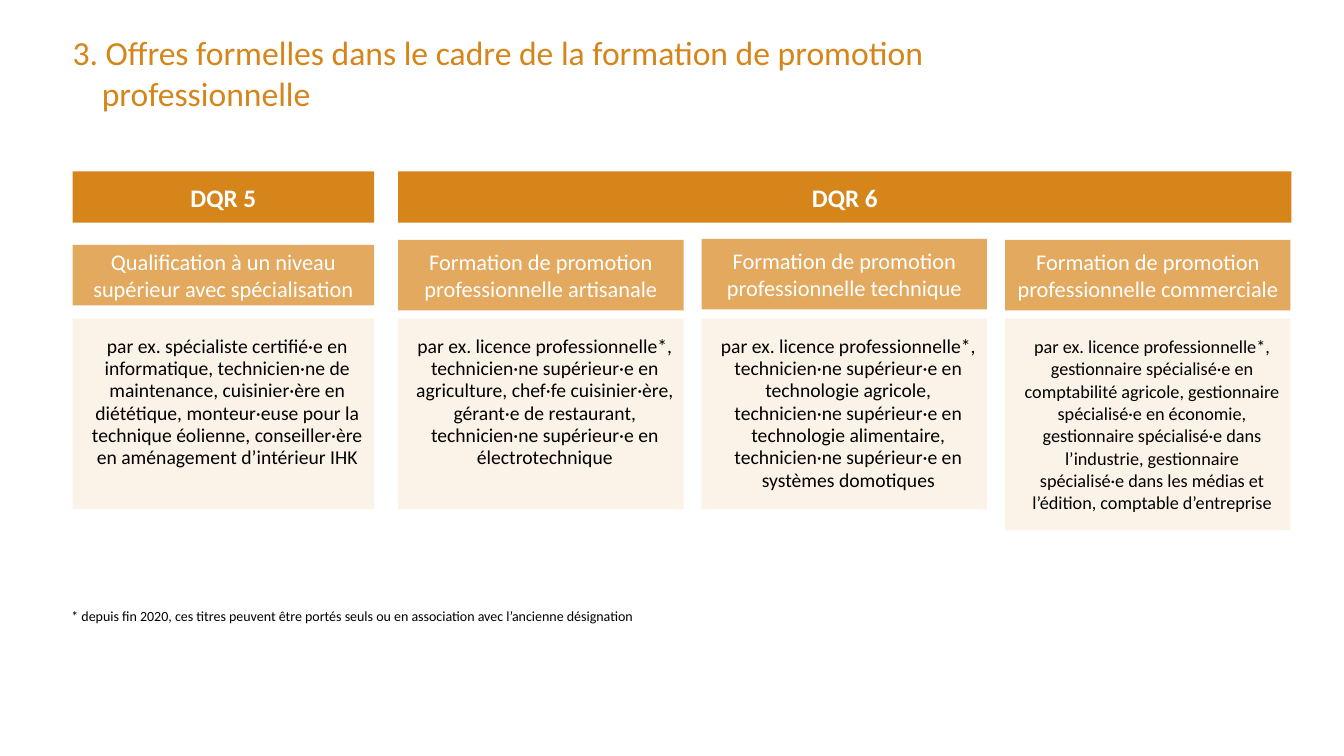
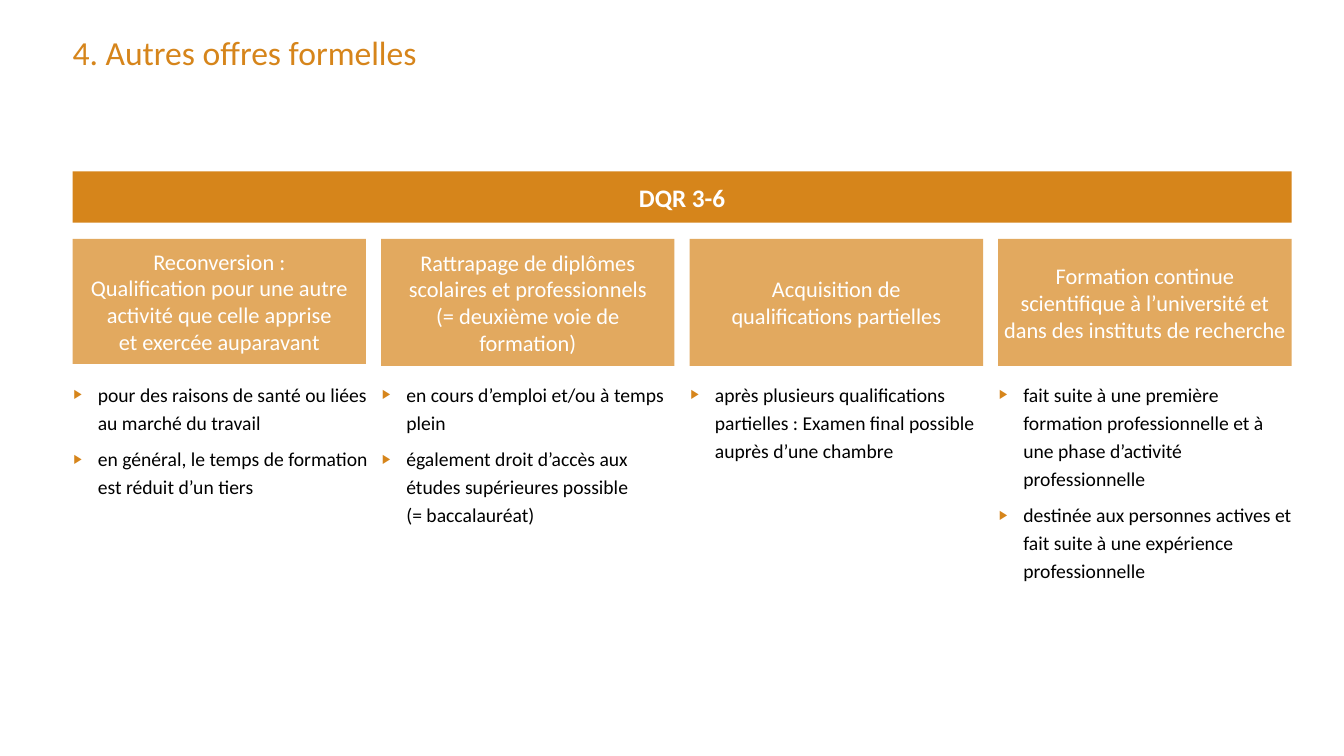
"""Build two slides on formal continuing education offers."""
from copy import deepcopy
from dataclasses import dataclass

from lxml import etree
from pptx import Presentation
from pptx import util as u
from pptx.dml import color
from pptx.enum import shapes, text
from pptx.oxml import ns

ORANGE, LIGHT_ORANGE, CREAM = "D6851B", "E2A95F", "FBF3E8"
WHITE, BLACK = "FFFFFF", "000000"
FONT = "Calibri"
LEFT, RIGHT = 0.72, 12.81
BAND_TOP, BAND_HEIGHT = 1.7, 0.51
LABEL_INSETS = (0.04, 0.08, 0.04, 0.08)
BAND_INSETS = (0.04, 0.08, 0.04, 0)
EXAMPLE_INSETS = (0.16, 0.16, 0.08, 0.16)
NO_INSETS = (0, 0, 0, 0)
TITLE_ONLY, FOUR_BODIES = 5, 4
OFFER_STEP, OFFER_WIDTH = 3.06, 2.91


@dataclass(frozen=True)
class Box:
    left: float
    top: float
    width: float
    height: float


@dataclass(frozen=True)
class Level:
    label: str
    examples: str
    label_box: Box
    examples_box: Box
    size: float = 14


@dataclass(frozen=True)
class Offer:
    label: str
    points: tuple[str, ...]
    height: float = 1.26


LEVELS = (
    Level("Qualification à un niveau supérieur avec spécialisation",
          "par ex. spécialiste certifié·e en informatique, technicien·ne de maintenance, "
          "cuisinier·ère en diététique, monteur·euse pour la technique éolienne, "
          "conseiller·ère en aménagement d’intérieur IHK",
          Box(LEFT, 2.43, 2.99, 0.6), Box(LEFT, 3.16, 2.99, 1.89)),
    Level("Formation de promotion\nprofessionnelle artisanale",
          "par ex. licence professionnelle*, technicien·ne supérieur·e en agriculture, "
          "chef·fe cuisinier·ère, gérant·e de restaurant, "
          "technicien·ne supérieur·e en électrotechnique",
          Box(3.95, 2.38, 2.83, 0.7), Box(3.95, 3.16, 2.83, 1.89)),
    Level("Formation de promotion\nprofessionnelle technique",
          "par ex. licence professionnelle*, technicien·ne supérieur·e en technologie agricole, "
          "technicien·ne supérieur·e en technologie alimentaire, "
          "technicien·ne supérieur·e en systèmes domotiques",
          Box(6.96, 2.37, 2.83, 0.7), Box(6.96, 3.16, 2.83, 1.89)),
    Level("Formation de promotion\nprofessionnelle commerciale",
          "par ex. licence professionnelle*, gestionnaire spécialisé·e en comptabilité agricole, "
          "gestionnaire spécialisé·e en économie, gestionnaire spécialisé·e dans l’industrie, "
          "gestionnaire spécialisé·e dans les médias et l’édition, comptable d’entreprise",
          Box(9.97, 2.38, 2.83, 0.7), Box(9.97, 3.16, 2.83, 2.1), 13),
)

OFFERS = (
    Offer("Reconversion :\nQualification pour une autre activité que celle apprise\n"
          "et exercée auparavant",
          ("pour des raisons de santé ou liées au marché du travail",
           "en général, le temps de formation est réduit d’un tiers"), 1.24),
    Offer("Rattrapage de diplômes scolaires et professionnels\n(= deuxième voie de formation)",
          ("en cours d’emploi et/ou à temps plein",
           "également droit d’accès aux études supérieures possible\n(= baccalauréat)")),
    Offer("Acquisition de\nqualifications partielles",
          ("après plusieurs qualifications partielles : Examen final possible\n"
           "auprès d’une chambre",)),
    Offer("Formation continue scientifique à l’université et dans des instituts de recherche",
          ("fait suite à une première formation professionnelle et à une phase d’activité "
           "professionnelle",
           "destinée aux personnes actives et\nfait suite à une expérience professionnelle")),
)


def rgb(value: str) -> color.RGBColor:
    return color.RGBColor.from_string(value)


def place(shape, box: Box) -> None:
    shape.left, shape.top = u.Inches(box.left), u.Inches(box.top)
    shape.width, shape.height = u.Inches(box.width), u.Inches(box.height)


def indent(paragraph, hanging: float, margin: float) -> None:
    properties = paragraph._p.get_or_add_pPr()
    properties.set("marL", str(u.Inches(margin)))
    properties.set("indent", str(-u.Inches(hanging)))


def add_bullet(paragraph) -> None:
    properties = paragraph._p.get_or_add_pPr()
    bullet_color = etree.SubElement(properties, ns.qn("a:buClr"))
    etree.SubElement(bullet_color, ns.qn("a:srgbClr"), val=ORANGE)
    etree.SubElement(properties, ns.qn("a:buSzPct"), val="65000")
    etree.SubElement(properties, ns.qn("a:buFont"), typeface="Arial")
    etree.SubElement(properties, ns.qn("a:buChar"), char="▶")


def write(shape, *lines: str, size: float, ink: str = BLACK, bold: bool = False,
          align=text.PP_ALIGN.LEFT, anchor=text.MSO_ANCHOR.TOP, insets=NO_INSETS,
          spacing: float | None = None, hanging: float = 0, margin: float = 0,
          bullets: bool = False) -> None:
    frame = shape.text_frame
    frame.word_wrap = True
    frame.auto_size = text.MSO_AUTO_SIZE.NONE
    frame.vertical_anchor = anchor
    (frame.margin_left, frame.margin_top,
     frame.margin_right, frame.margin_bottom) = map(u.Inches, insets)
    for index, line in enumerate(lines):
        paragraph = frame.add_paragraph() if index else frame.paragraphs[0]
        paragraph.text = line
        paragraph.alignment = align
        paragraph.line_spacing = u.Pt(spacing) if spacing else 1.0
        paragraph.space_before = u.Pt(6 if index else 0)
        indent(paragraph, hanging, margin)
        if bullets:
            add_bullet(paragraph)
        for run in paragraph.runs:
            run.font.name, run.font.size, run.font.bold = FONT, u.Pt(size), bold
            run.font.color.rgb = rgb(ink)
        for line_break in paragraph._p.findall(ns.qn("a:br")):
            line_break.append(deepcopy(paragraph.runs[0]._r.rPr))


def add_panel(slide, box: Box, fill: str, content: str, **formatting) -> None:
    shape = slide.shapes.add_shape(shapes.MSO_SHAPE.RECTANGLE, 0, 0, 0, 0)
    place(shape, box)
    shape.shadow.inherit = False
    shape.fill.solid()
    shape.fill.fore_color.rgb = rgb(fill)
    shape.line.fill.background()
    write(shape, content, align=text.PP_ALIGN.CENTER, **formatting)


def add_band(slide, left: float, right: float, content: str) -> None:
    add_panel(slide, Box(left, BAND_TOP, right - left, BAND_HEIGHT), ORANGE, content,
              size=18, ink=WHITE, bold=True, anchor=text.MSO_ANCHOR.MIDDLE,
              insets=BAND_INSETS, spacing=17)


def add_label(slide, box: Box, content: str) -> None:
    add_panel(slide, box, LIGHT_ORANGE, content, size=16, ink=WHITE,
              anchor=text.MSO_ANCHOR.MIDDLE, insets=LABEL_INSETS)


def add_titled_slide(presentation, layout: int, title: str, height: float):
    slide = presentation.slides.add_slide(presentation.slide_layouts[layout])
    place(slide.shapes.title, Box(LEFT, 0.32, 9.84, height))
    write(slide.shapes.title, title, size=24, ink=ORANGE, hanging=0.29, margin=0.29)
    return slide


def build_promotion_slide(presentation) -> None:
    slide = add_titled_slide(
        presentation, TITLE_ONLY,
        "3. Offres formelles dans le cadre de la formation de promotion professionnelle", 1.21)
    add_band(slide, LEFT, 3.71, "DQR 5")
    add_band(slide, 3.95, RIGHT, "DQR 6")
    for level in LEVELS:
        add_label(slide, level.label_box, level.label)
        add_panel(slide, level.examples_box, CREAM, level.examples, size=level.size,
                  insets=EXAMPLE_INSETS, spacing=16)
    footnote = slide.shapes.add_textbox(0, 0, 0, 0)
    place(footnote, Box(0.61, 5.98, 8.1, 0.27))
    write(footnote, "* depuis fin 2020, ces titres peuvent être portés seuls ou en association "
          "avec l’ancienne désignation", size=10, insets=(0.1, 0.05, 0.1, 0.05))


def build_other_offers_slide(presentation) -> None:
    slide = add_titled_slide(presentation, FOUR_BODIES, "4. Autres offres formelles", 0.49)
    add_band(slide, LEFT, RIGHT, "DQR 3-6")
    bodies = list(slide.placeholders)[1:]
    for index, (offer, body) in enumerate(zip(OFFERS, bodies)):
        offset = index * OFFER_STEP
        add_label(slide, Box(LEFT + offset, 2.37, OFFER_WIDTH, offer.height), offer.label)
        place(body, Box(0.42 + offset, 3.75, 3.24, 2.25))
        write(body, *offer.points, size=14, spacing=20, hanging=0.24, margin=0.55, bullets=True)


def main() -> None:
    presentation = Presentation()
    presentation.slide_width, presentation.slide_height = u.Inches(13.33), u.Inches(7.5)
    build_promotion_slide(presentation)
    build_other_offers_slide(presentation)
    presentation.save("out.pptx")


if __name__ == "__main__":
    main()
